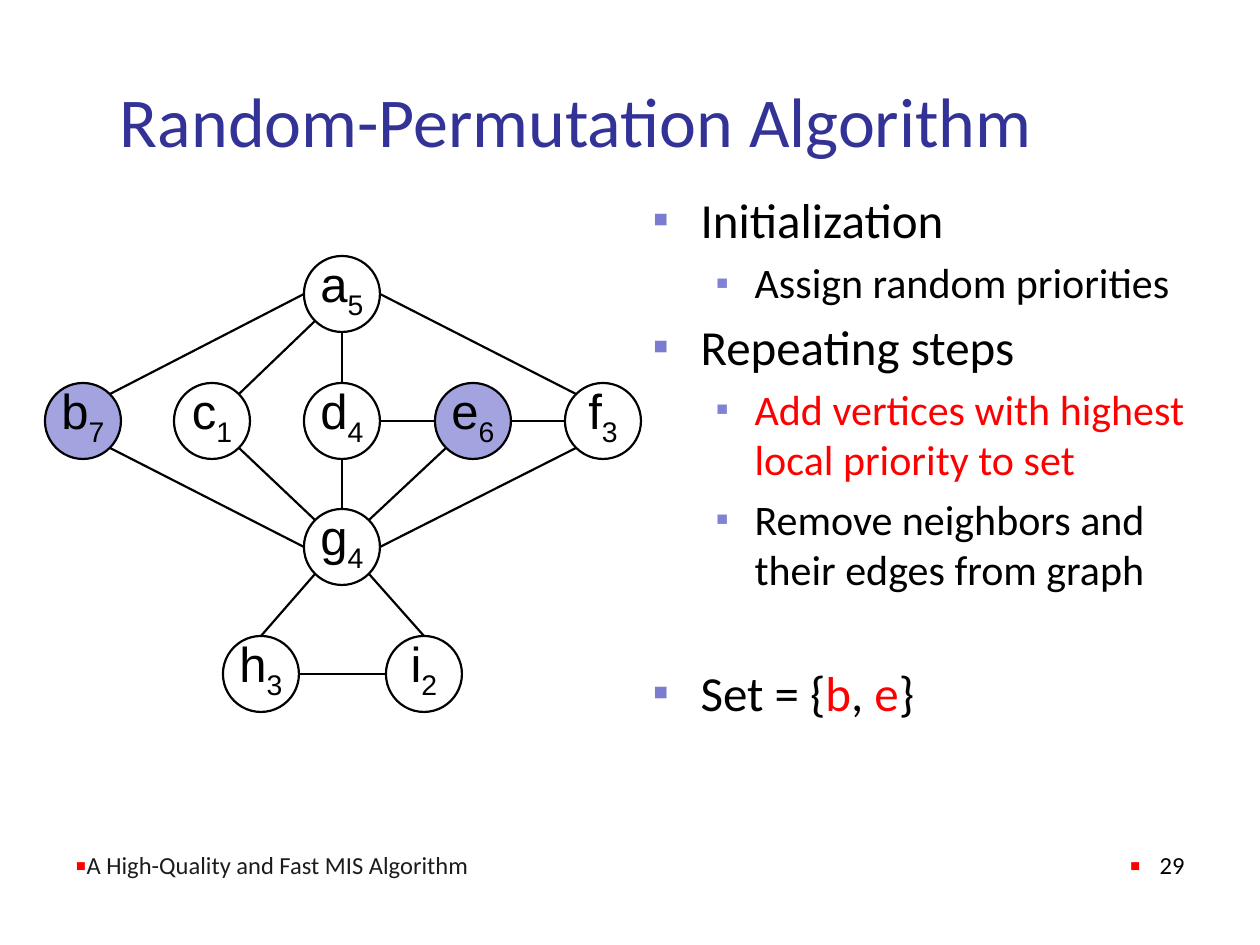
"""Build the Random-Permutation Algorithm slide with its prioritised graph."""
from lxml import etree
from pptx import Presentation
from pptx.dml.color import RGBColor
from pptx.enum.shapes import MSO_CONNECTOR, MSO_SHAPE
from pptx.enum.text import MSO_ANCHOR, MSO_AUTO_SIZE, PP_ALIGN
from pptx.oxml.ns import qn
from pptx.util import Emu, Pt

STRAIGHT, OVAL = MSO_CONNECTOR.STRAIGHT, MSO_SHAPE.OVAL
MIDDLE, BOTTOM, TOP = MSO_ANCHOR.MIDDLE, MSO_ANCHOR.BOTTOM, MSO_ANCHOR.TOP
LEFT, CENTER, RIGHT = PP_ALIGN.LEFT, PP_ALIGN.CENTER, PP_ALIGN.RIGHT
NO_FIT = MSO_AUTO_SIZE.NONE

COLORS = {
    "black": "000000", "red": "FF0000", "title": "333397", "footer": "1C1C1C",
    "chosen": "A3A3E0", "bullet": "7B7BD1", "sub_bullet": "8282D4",
}
LEVELS = [
    {"size": 28, "margin": 48, "hang": 48, "color": "bullet", "percent": 95},
    {"size": 24, "margin": 102, "hang": 39, "color": "sub_bullet", "percent": 90},
]
DIAMETER = 76
ROWS = [256, 383, 509, 636]
NODES = {
    "a": (304, ROWS[0], "5"), "b": (45, ROWS[1], "7"), "c": (174, ROWS[1], "1"),
    "d": (304, ROWS[1], "4"), "e": (435, ROWS[1], "6"), "f": (565, ROWS[1], "3"),
    "g": (304, ROWS[2], "4"), "h": (223, ROWS[3], "3"), "i": (386, ROWS[3], "2"),
}
CHOSEN = "be"
EDGES = [
    "d S g N", "f SW g E", "e W d E", "f W e E", "a SW c NE", "a W b NE", "a S d N",
    "c SE g NW", "a E f NW", "b SE g W", "g SW h N", "g SE i N", "h E i W", "e SW g NE",
]
STEPS = [
    (0, 0, [("Initialization", "black")]),
    (1, 5, [("Assign random priorities", "black")]),
    (0, 5, [("Repeating steps", "black")]),
    (1, 5, [("Add vertices with highest local priority to set", "red")]),
    (1, 5, [("Remove neighbors and their edges from graph", "black")]),
    (0, 39, [("Set = {", "black"), ("b", "red"), (", ", "black"), ("e", "red"), ("}", "black")]),
]


def px(length):
    return Emu(round(length * 914400 / 126))


def rgb(color):
    return RGBColor.from_string(COLORS[color])


def rim_point(node, side):
    left, top, _ = NODES[node]
    radius = DIAMETER / 2
    reach = radius if len(side) == 1 else radius * 0.71
    across = ("E" in side) - ("W" in side)
    down = ("S" in side) - ("N" in side)
    return px(left + radius + across * reach), px(top + radius + down * reach)


class GraphSlide:
    def __init__(self, slide):
        self.slide = slide
        self.text_font = "Calibri"
        self.node_font = "Arial"
        self.stroke = Pt(1.25)

    def place(self, shape, box):
        for side, length in zip(("left", "top", "width", "height"), box):
            setattr(shape, side, px(length))

    def frame(self, shape, **formats):
        formats = {"word_wrap": True, "auto_size": NO_FIT, **formats}
        for name, value in formats.items():
            setattr(shape.text_frame, name, value)
        return shape.text_frame

    def run(self, paragraph, text, size, color, font=None):
        run = paragraph.add_run()
        run.text = text
        formats = {"name": font or self.text_font, "size": Pt(size)}
        for name, value in formats.items():
            setattr(run.font, name, value)
        run.font.color.rgb = rgb(color)
        return run

    def bullet(self, paragraph, color, percent, margin, hang):
        properties = paragraph._p.get_or_add_pPr()
        properties.set("marL", str(px(margin)))
        properties.set("indent", str(-px(hang)))
        tint = etree.SubElement(properties, qn("a:buClr"))
        etree.SubElement(tint, qn("a:srgbClr"), val=COLORS[color])
        etree.SubElement(properties, qn("a:buSzPct"), val=str(percent * 1000))
        etree.SubElement(properties, qn("a:buFont"), typeface=self.node_font)
        etree.SubElement(properties, qn("a:buChar"), char="▪")

    def title(self, text, box):
        heading = self.slide.shapes.title
        self.place(heading, box)
        paragraph = self.frame(heading, vertical_anchor=MIDDLE, margin_left=px(57)).paragraphs[0]
        paragraph.alignment = LEFT
        self.run(paragraph, text, 40, "title")

    def body(self, steps, box):
        outline = self.slide.placeholders[1]
        self.place(outline, box)
        frame = self.frame(outline, vertical_anchor=TOP)
        for number, (level, gap, runs) in enumerate(steps):
            paragraph = frame.add_paragraph() if number else frame.paragraphs[0]
            look = LEVELS[level]
            self.bullet(paragraph, look["color"], look["percent"], look["margin"], look["hang"])
            paragraph.level = level
            paragraph.space_before = Pt(gap)
            for text, color in runs:
                self.run(paragraph, text, look["size"], color)

    def footer(self, text, box, color, alignment, hang):
        note = self.slide.shapes.add_textbox(*map(px, box))
        paragraph = self.frame(note, vertical_anchor=BOTTOM).paragraphs[0]
        self.bullet(paragraph, "red", 130, hang, hang)
        paragraph.alignment = alignment
        self.run(paragraph, text, 14, color)

    def edge(self, start, start_side, end, end_side):
        line = self.slide.shapes.add_connector(
            STRAIGHT, *rim_point(start, start_side), *rim_point(end, end_side))
        line.line.width = self.stroke
        line.line.color.rgb = rgb("black")
        etree.SubElement(line._element.spPr, qn("a:effectLst"))

    def node(self, letter, left, top, priority):
        vertex = self.slide.shapes.add_shape(OVAL, *map(px, (left, top, DIAMETER, DIAMETER)))
        vertex.shadow.inherit = False
        if letter in CHOSEN:
            vertex.fill.solid()
            vertex.fill.fore_color.rgb = rgb("chosen")
        else:
            vertex.fill.background()
        vertex.line.width = self.stroke
        vertex.line.color.rgb = rgb("black")
        margins = {f"margin_{side}": 0 for side in ("left", "top", "right", "bottom")}
        paragraph = self.frame(vertex, vertical_anchor=BOTTOM, **margins).paragraphs[0]
        paragraph.alignment = CENTER
        self.run(paragraph, letter, 28, "black", self.node_font)
        subscript = self.run(paragraph, priority, 28, "black", self.node_font)
        subscript.font._element.set("baseline", "-25000")


def main():
    deck = Presentation()
    deck.slide_width, deck.slide_height = px(1260), px(945)
    page = GraphSlide(deck.slides.add_slide(deck.slide_layouts[1]))
    page.title("Random-Permutation Algorithm", (63, 76, 1134, 88))
    page.body(STEPS, (640, 183, 567, 617))
    for edge in EDGES:
        page.edge(*edge.split())
    for letter, (left, top, priority) in NODES.items():
        page.node(letter, left, top, priority)
    page.footer("A High-Quality and Fast MIS Algorithm", (63, 823, 872, 63), "footer", LEFT, 0)
    page.footer("29", (935, 823, 262, 63), "black", RIGHT, 30)
    deck.save("out.pptx")


if __name__ == "__main__":
    main()
